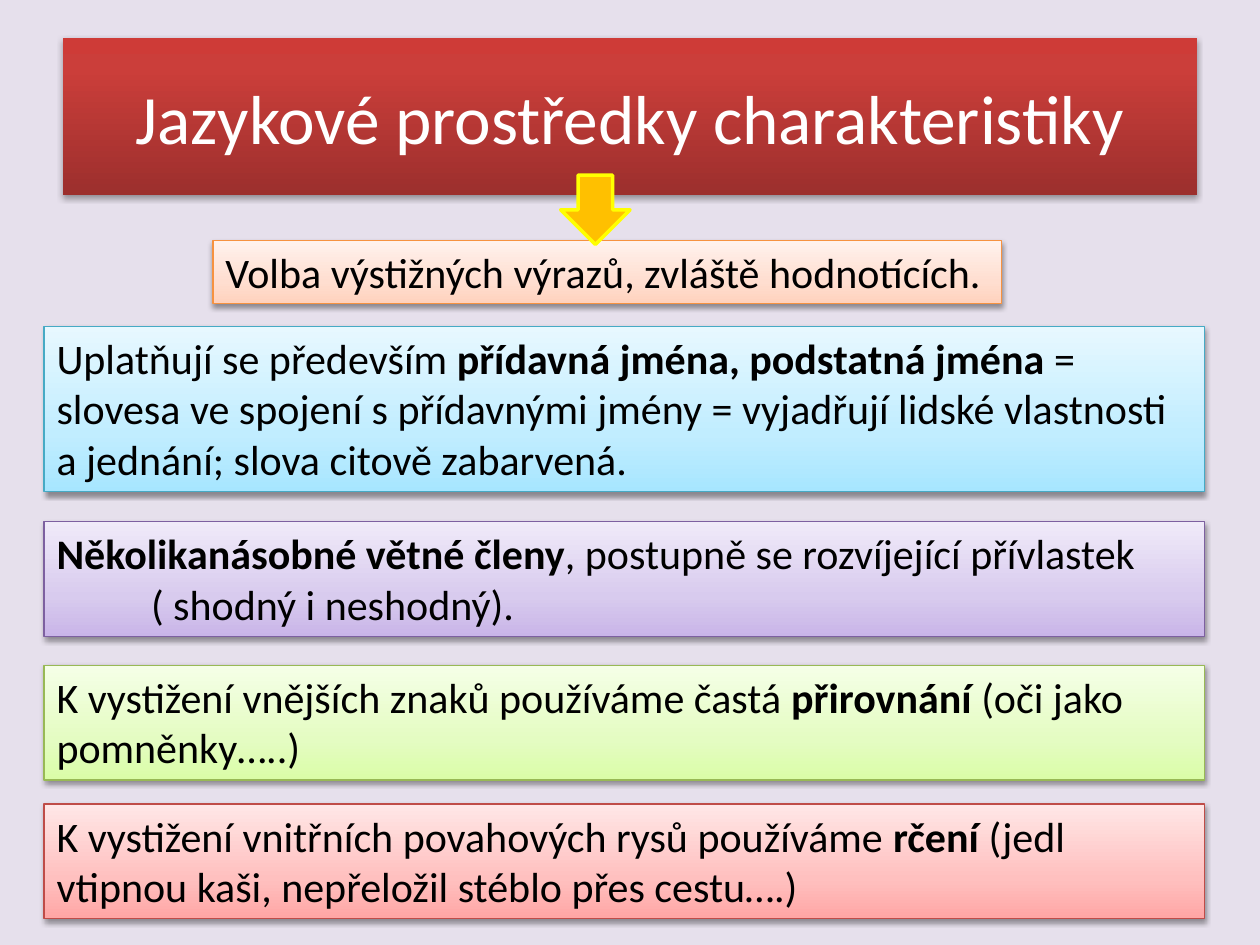
from copy import deepcopy

from lxml.etree import SubElement
from pptx import Presentation
from pptx.dml.color import RGBColor as RGB
from pptx.enum.shapes import MSO_SHAPE as Kind
from pptx.enum.text import MSO_ANCHOR as Anchor, MSO_AUTO_SIZE as Fit, PP_ALIGN as Align
from pptx.oxml.ns import qn
from pptx.util import Inches, Pt

FONT = "Calibri"
BACK = RGB(0xE6, 0xE0, 0xEC)
WHITE = RGB(0xFF, 0xFF, 0xFF)
BLACK = RGB(0x00, 0x00, 0x00)
GOLD = RGB(0xFF, 0xC0, 0x00)
YELLOW = RGB(0xFF, 0xFF, 0x00)

# Gradient colours, bottom to top
RED = [RGB(0x9C, 0x2F, 0x2D), RGB(0xCB, 0x3E, 0x3A), RGB(0xCE, 0x3B, 0x37)]
PEACH = [RGB(0xFF, 0xD2, 0xBD), RGB(0xFF, 0xDE, 0xD0), RGB(0xFF, 0xF2, 0xED)]
SKY = [RGB(0xA7, 0xE6, 0xFF), RGB(0xC1, 0xED, 0xFF), RGB(0xE7, 0xF8, 0xFF)]
LILAC = [RGB(0xC9, 0xB5, 0xE8), RGB(0xD8, 0xCB, 0xEE), RGB(0xF0, 0xEA, 0xF9)]
LIME = [RGB(0xDA, 0xFD, 0xA7), RGB(0xE4, 0xFC, 0xC2), RGB(0xF5, 0xFF, 0xE7)]
ROSE = [RGB(0xFF, 0xA6, 0xA5), RGB(0xFF, 0xC0, 0xBF), RGB(0xFF, 0xE7, 0xE7)]

# Box outlines
ORANGE = RGB(0xF6, 0x92, 0x40)
TEAL = RGB(0x46, 0xAA, 0xC5)
PURPLE = RGB(0x7D, 0x60, 0xA0)
GREEN = RGB(0x98, 0xB9, 0x55)
BRICK = RGB(0xBF, 0x4C, 0x48)


def write(para, text, size=24, color=BLACK, bold=False):
    run = para.add_run()
    run.text = text
    font = run.font
    font.name, font.size, font.bold = FONT, Pt(size), bold
    font.color.rgb = color


class Page:
    def __init__(self, deck):
        self.slide = deck.slides.add_slide(deck.slide_layouts[5])
        fill = self.slide.background.fill
        fill.solid()
        fill.fore_color.rgb = BACK

    def blend(self, shape, colors, middle):
        shape.fill.gradient()
        shape.fill.gradient_angle = 90
        stops = shape._element.spPr.find(".//" + qn("a:gsLst"))
        stops.append(deepcopy(stops[0]))
        for stop, place, color in zip(shape.fill.gradient_stops, (0, middle, 1), colors):
            stop.position = place
            stop.color.rgb = color

    def shade(self, shape, dist, alpha):
        shape.shadow.inherit = False
        effects = shape._element.spPr.find(qn("a:effectLst"))
        outer = SubElement(effects, qn("a:outerShdw"), blurRad=str(Pt(3.1)),
                           dist=str(Pt(dist)), dir="5400000", rotWithShape="0")
        color = SubElement(outer, qn("a:srgbClr"), val="000000")
        SubElement(color, qn("a:alpha"), val=str(alpha * 1000))

    def title(self, text, left, top, width, height):
        shape = self.slide.shapes.title
        shape.left, shape.top = Inches(left), Inches(top)
        shape.width, shape.height = Inches(width), Inches(height)
        self.blend(shape, RED, 0.8)
        self.shade(shape, 1.8, 35)
        frame = shape.text_frame
        frame.vertical_anchor = Anchor.MIDDLE
        frame.paragraphs[0].alignment = Align.CENTER
        write(frame.paragraphs[0], text, size=39.6, color=WHITE)

    def box(self, paras, colors, edge, top, height, left=0.35, width=9.21, wrap=True):
        """Each paragraph is an indent and a list of (text, bold) pairs."""
        shape = self.slide.shapes.add_textbox(
            Inches(left), Inches(top), Inches(width), Inches(height))
        self.blend(shape, colors, 0.35)
        shape.line.color.rgb = edge
        shape.line.width = Pt(0.75)
        self.shade(shape, 1.6, 38)
        frame = shape.text_frame
        frame.word_wrap = wrap
        frame.auto_size = Fit.SHAPE_TO_FIT_TEXT
        for i, (indent, parts) in enumerate(paras):
            para = frame.add_paragraph() if i else frame.paragraphs[0]
            if indent:
                para._p.get_or_add_pPr().set("marL", str(Inches(indent)))
            for text, bold in parts:
                write(para, text, bold=bold)

    def arrow(self, left, top, size):
        shape = self.slide.shapes.add_shape(
            Kind.DOWN_ARROW, Inches(left), Inches(top), Inches(size), Inches(size))
        shape.shadow.inherit = False
        shape.fill.solid()
        shape.fill.fore_color.rgb = GOLD
        shape.line.color.rgb = YELLOW
        shape.line.width = Pt(2)


def main():
    deck = Presentation()
    deck.slide_width, deck.slide_height = Inches(10), Inches(7.5)
    page = Page(deck)
    page.title("Jazykové prostředky charakteristiky", 0.5, 0.3, 9, 1.25)

    # Main idea
    page.box([(0, [("Volba výstižných výrazů, zvláště hodnotících.", False)])],
             PEACH, ORANGE, 1.91, 0.5, left=1.69, width=6.26, wrap=False)

    # Language means
    page.box([(0, [("Uplatňují se především ", False),
                   ("přídavná jména, podstatná jména", True),
                   (" = slovesa ve spojení s přídavnými jmény = vyjadřují lidské "
                    "vlastnosti a jednání; slova citově zabarvená.", False)])],
             SKY, TEAL, 2.59, 1.31)
    page.box([(0, [("Několikanásobné větné členy", True),
                   (", postupně se rozvíjející přívlastek", False)]),
              (0.75, [("( shodný i neshodný).", False)])],
             LILAC, PURPLE, 4.14, 0.91)
    page.box([(0, [("K vystižení vnějších znaků používáme častá ", False),
                   ("přirovnání ", True),
                   ("(oči jako pomněnky…..)", False)])],
             LIME, GREEN, 5.28, 0.91)
    page.box([(0, [("K vystižení vnitřních povahových rysů používáme ", False),
                   ("rčení ", True),
                   ("(jedl vtipnou kaši, nepřeložil stéblo přes cestu….)", False)])],
             ROSE, BRICK, 6.38, 0.91)

    # Arrow from the title to the main idea
    page.arrow(4.45, 1.39, 0.55)
    deck.save("out.pptx")


if __name__ == "__main__":
    main()
